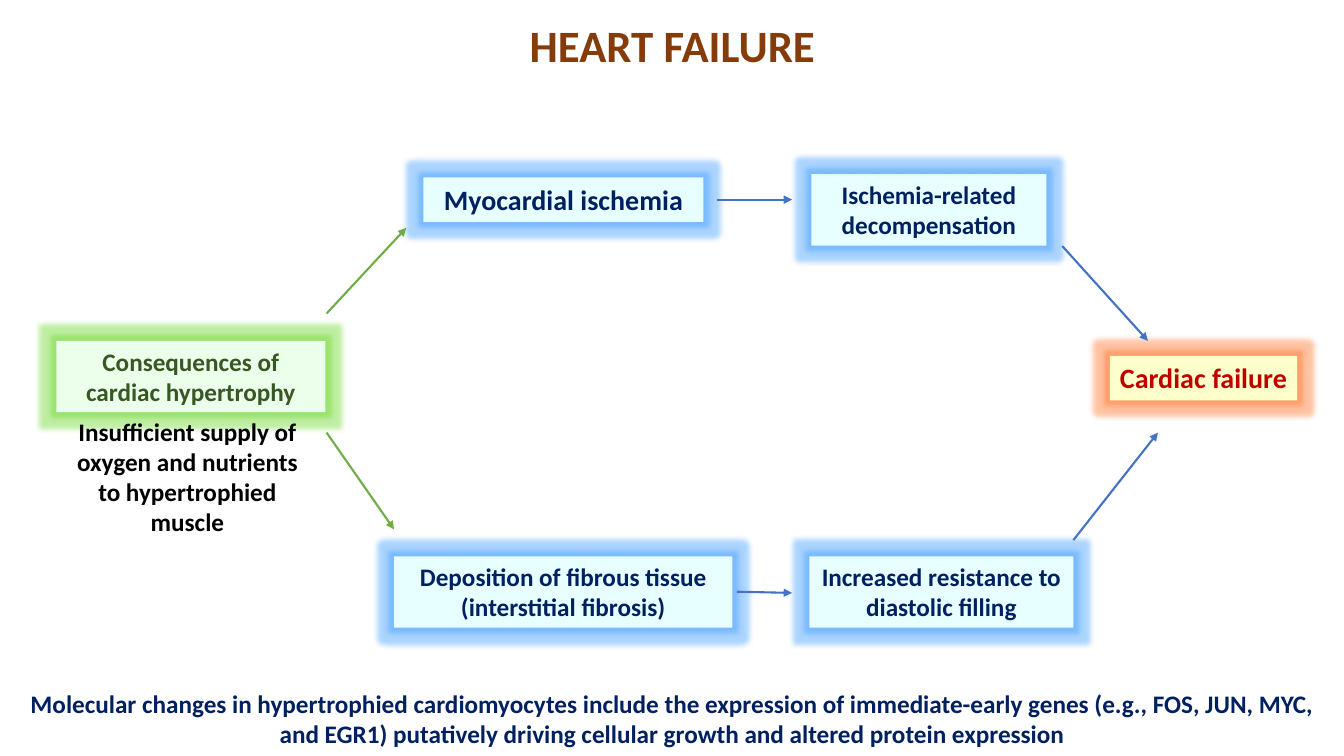
from lxml import etree
from pptx import Presentation, util as u
from pptx.dml.color import RGBColor
from pptx.enum import shapes, text
from pptx.oxml.ns import qn

# Content: lengths in centimetres
COLORS = {
    "title": "843C0B", "navy": "002060", "black": "000000",
    "green": "385723", "mint": "EBFFEB", "lime": "5FD61A",
    "ice": "E7FFFF", "sky": "2E95FF",
    "red": "C00000", "cream": "FFFFCC", "orange": "FF6B1A",
    "leaf": "70AD47", "blue": "4472C4",
}
STYLES = {  # fill, glow, font
    "cause": ("mint", "lime", "green"),
    "step": ("ice", "sky", "navy"),
    "end": ("cream", "orange", "red"),
}
BOXES = [  # words, style, left, top, width, lines
    ("Consequences of cardiac hypertrophy", "cause", 1.42, 8.59, 6.78, 2),
    ("Myocardial ischemia", "step", 10.67, 4.47, 7.06, 1),
    ("Ischemia-related decompensation", "step", 20.45, 4.39, 5.92, 2),
    ("Cardiac failure", "end", 27.97, 8.97, 4.72, 1),
    ("Deposition of fibrous tissue (interstitial fibrosis)", "step", 9.93, 14.02, 8.53, 2),
    ("Increased resistance to diastolic filling", "step", 20.4, 14.02, 6.65, 2),
]
SIZES = {1: (1.12, 20), 2: (1.8, 18)}  # lines: box height, font size
ARROWS = [  # colour, from, to
    ("leaf", (8.23, 7.9), (10.24, 5.74)),
    ("leaf", (8.23, 10.9), (9.93, 13.34)),
    ("blue", (18.08, 5.03), (19.96, 5.03)),
    ("blue", (18.57, 14.91), (19.96, 14.94)),
    ("blue", (27.05, 13.61), (29.18, 10.9)),
    ("blue", (26.77, 6.2), (28.93, 8.59)),
]
TITLE = "HEART FAILURE"
CAUSE = "Insufficient supply of oxygen and nutrients to hypertrophied muscle"
NOTE = ("Molecular changes in hypertrophied cardiomyocytes include the expression of "
        "immediate-early genes (e.g., FOS, JUN, MYC, and EGR1) putatively driving "
        "cellular growth and altered protein expression")

deck = Presentation()
deck.slide_width, deck.slide_height = u.Cm(33.87), u.Cm(19.05)
slide = deck.slides.add_slide(deck.slide_layouts[6])


def rgb(name):
    return RGBColor.from_string(COLORS[name])


def write(shape, words, color="navy", size=18, wrap=True, middle=False, inset=0.25, space=None):
    frame = shape.text_frame
    frame.word_wrap = wrap
    frame.margin_left = u.Cm(inset)
    frame.vertical_anchor = text.MSO_ANCHOR.MIDDLE if middle else text.MSO_ANCHOR.TOP
    para = frame.paragraphs[0]
    para.alignment = text.PP_ALIGN.CENTER
    para.line_spacing = space
    run = para.add_run()
    run.text = words
    font = run.font
    font.name, font.size, font.bold = "Calibri", u.Pt(size), True
    font.color.rgb = rgb(color)


def label(place, words, **form):
    write(slide.shapes.add_textbox(*map(u.Cm, place)), words, **form)


def glow(shape, color):
    effects = shape._element.spPr.find(qn("a:effectLst"))
    halo = etree.SubElement(effects, qn("a:glow"), rad=str(u.Pt(8)))
    tint = etree.SubElement(halo, qn("a:srgbClr"), val=COLORS[color])
    etree.SubElement(tint, qn("a:alpha"), val="40000")


# Title
label((2.34, 0, 29.21, 2.44), TITLE, color="title", size=32, middle=True, space=0.9)

# Glowing boxes
for words, style, left, top, width, lines in BOXES:
    fill, halo, ink = STYLES[style]
    height, size = SIZES[lines]
    box = slide.shapes.add_shape(shapes.MSO_SHAPE.RECTANGLE,
                                 *map(u.Cm, (left, top, width, height)))
    box.shadow.inherit = False
    box.fill.solid()
    box.fill.fore_color.rgb = rgb(fill)
    box.line.fill.background()
    glow(box, halo)
    write(box, words, color=ink, size=size, wrap=lines > 1)

# Arrows
for color, start, end in ARROWS:
    arrow = slide.shapes.add_connector(shapes.MSO_CONNECTOR.STRAIGHT,
                                       *map(u.Cm, start + end))
    arrow.line.color.rgb = rgb(color)
    arrow.line.width = u.Pt(1.5)
    etree.SubElement(arrow.line._get_or_add_ln(), qn("a:tailEnd"), type="triangle")
    etree.SubElement(arrow._element.spPr, qn("a:effectLst"))

# Captions
label((0.33, 10.36, 7.52, 4.75), CAUSE, color="black", inset=1.52)
label((0.18, 17.22, 33.53, 1.78), NOTE)

deck.save("out.pptx")
